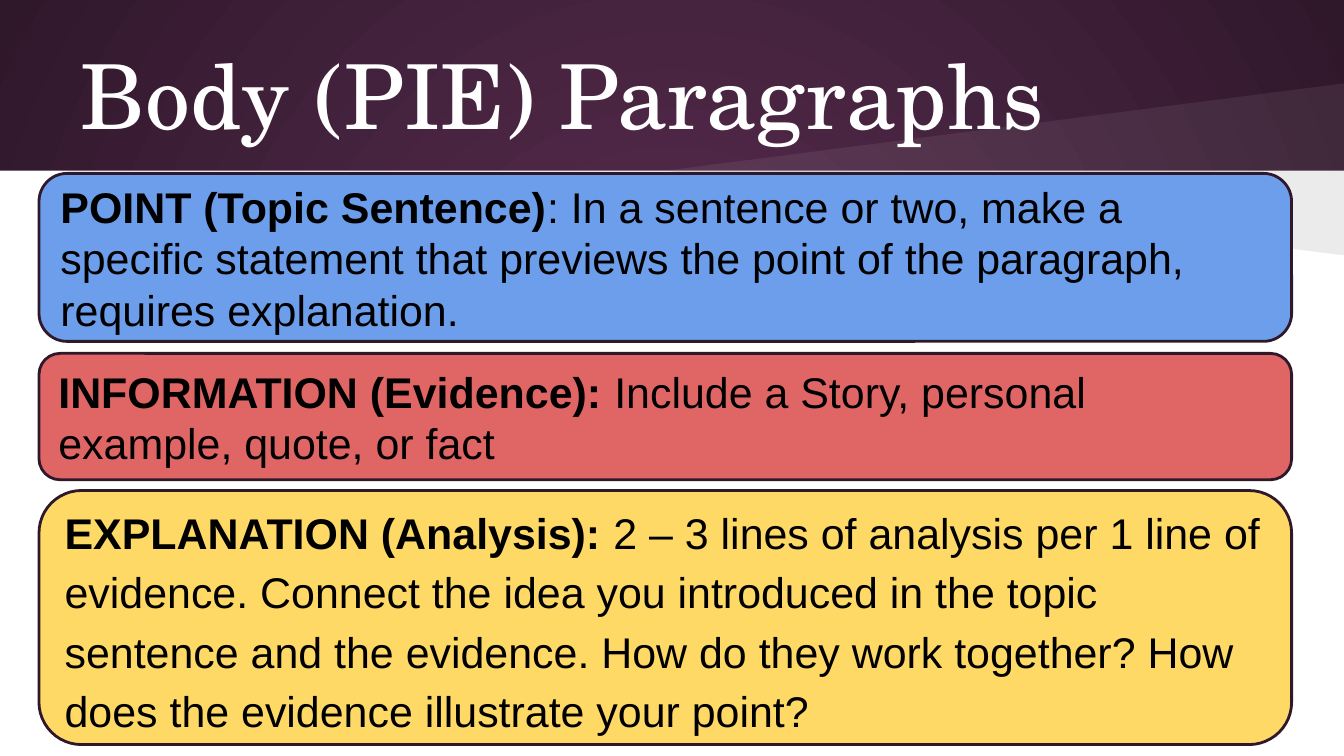
from lxml import etree
from pptx import Presentation
from pptx.dml.color import RGBColor
from pptx.enum import shapes, text
from pptx.oxml.ns import qn
from pptx.util import Inches, Pt

TITLE = "Body (PIE) Paragraphs"
# label, explanation, fill, top, height, line spacing
CARDS = [
    ("POINT (Topic Sentence)",
     ": In a sentence or two, make a specific statement that previews the point "
     "of the paragraph, requires explanation.",
     "6D9EEB", 1.29, 1.25, 1.0),
    ("INFORMATION (Evidence):",
     " Include a Story, personal example, quote, or fact",
     "E06666", 2.63, 0.94, 1.0),
    ("EXPLANATION (Analysis):",
     " 2 – 3 lines of analysis per 1 line of evidence. Connect the idea you "
     "introduced in the topic sentence and the evidence. How do they work "
     "together? How does the evidence illustrate your point?",
     "FFD966", 3.65, 1.89, 1.15),
]
THEME = {
    "title_font": "TeX Gyre Schola", "title_size": 48,
    "body_font": "Arial", "body_size": 23,
    "white": "FFFFFF", "black": "000000",
    "plum": "592D50", "dark_plum": "30182B",
}
WIDTH = 10
HEIGHT = WIDTH * 9 / 16
BAND_BOTTOM = 1.27
WEDGE_LEFT = 4.95
# far corner height, colour, opacity in percent
WEDGES = [(0.62, THEME["white"], 7), (1.9, THEME["black"], 8)]
CARD_LEFT, CARD_WIDTH = 0.29, 9.32
CARD_ROUNDING = 0.167
INSET = 0.1


def paint(shape, color):
    shape.shadow.inherit = False
    shape.fill.solid()
    shape.fill.fore_color.rgb = RGBColor.from_string(color)
    shape.line.fill.background()


def set_radial_background(slide):
    fill = slide.background.fill
    fill.gradient()
    for stop, color in zip(fill.gradient_stops, (THEME["plum"], THEME["dark_plum"])):
        stop.color.rgb = RGBColor.from_string(color)
    linear = next(slide.element.iter(qn("a:lin")))
    gradient = linear.getparent()
    circle = etree.Element(qn("a:path"), path="circle")
    etree.SubElement(circle, qn("a:fillToRect"),
                     {side: "50000" for side in "ltrb"})
    gradient.replace(linear, circle)


def add_wedge(slide, corner, color, opacity):
    start, tip, end = [
        (Inches(x), Inches(y))
        for x, y in ((WIDTH, BAND_BOTTOM), (WEDGE_LEFT, BAND_BOTTOM), (WIDTH, corner))]
    builder = slide.shapes.build_freeform(*start)
    builder.add_line_segments([tip, end], close=True)
    wedge = builder.convert_to_shape()
    paint(wedge, color)
    rgb = next(wedge.element.spPr.iter(qn("a:srgbClr")))
    etree.SubElement(rgb, qn("a:alpha"), val=str(opacity * 1000))


def prepare_frame(shape):
    """Set wrapping, insets and anchor; return the first paragraph."""
    frame = shape.text_frame
    frame.word_wrap = True
    frame.auto_size = text.MSO_AUTO_SIZE.NONE
    frame.vertical_anchor = text.MSO_ANCHOR.MIDDLE
    frame.margin_left = frame.margin_right = Inches(INSET)
    frame.margin_top = frame.margin_bottom = Inches(INSET)
    frame.paragraphs[0].alignment = text.PP_ALIGN.LEFT
    return frame.paragraphs[0]


def add_run(paragraph, words, kind, color, bold=False):
    run = paragraph.add_run()
    run.text = words
    run.font.name = THEME[f"{kind}_font"]
    run.font.size = Pt(THEME[f"{kind}_size"])
    run.font.color.rgb = RGBColor.from_string(color)
    run.font.bold = bold


def add_title(slide):
    title = slide.shapes.title
    title.left, title.top = Inches(0.5), Inches(0.23)
    title.width, title.height = Inches(9), Inches(0.94)
    add_run(prepare_frame(title), TITLE, "title", THEME["white"])
    slide.shapes.element.append(title.element)  # bring in front of the wedges


def add_card(slide, label, explanation, color, top, height, spacing):
    card = slide.shapes.add_shape(
        shapes.MSO_SHAPE.ROUNDED_RECTANGLE, Inches(CARD_LEFT), Inches(top),
        Inches(CARD_WIDTH), Inches(height))
    card.adjustments[0] = CARD_ROUNDING
    paint(card, color)
    card.line.color.rgb = RGBColor.from_string(THEME["dark_plum"])
    card.line.width = Pt(1.5)
    paragraph = prepare_frame(card)
    paragraph.line_spacing = spacing
    add_run(paragraph, label, "body", THEME["black"], bold=True)
    add_run(paragraph, explanation, "body", THEME["black"])


def main():
    presentation = Presentation()
    presentation.slide_width = Inches(WIDTH)
    presentation.slide_height = Inches(HEIGHT)
    slide = presentation.slides.add_slide(presentation.slide_layouts[5])
    set_radial_background(slide)
    page = slide.shapes.add_shape(
        shapes.MSO_SHAPE.RECTANGLE, 0, Inches(BAND_BOTTOM),
        Inches(WIDTH), Inches(HEIGHT - BAND_BOTTOM))
    paint(page, THEME["white"])
    for wedge in WEDGES:
        add_wedge(slide, *wedge)
    add_title(slide)
    for card in CARDS:
        add_card(slide, *card)
    presentation.save("out.pptx")


if __name__ == "__main__":
    main()
